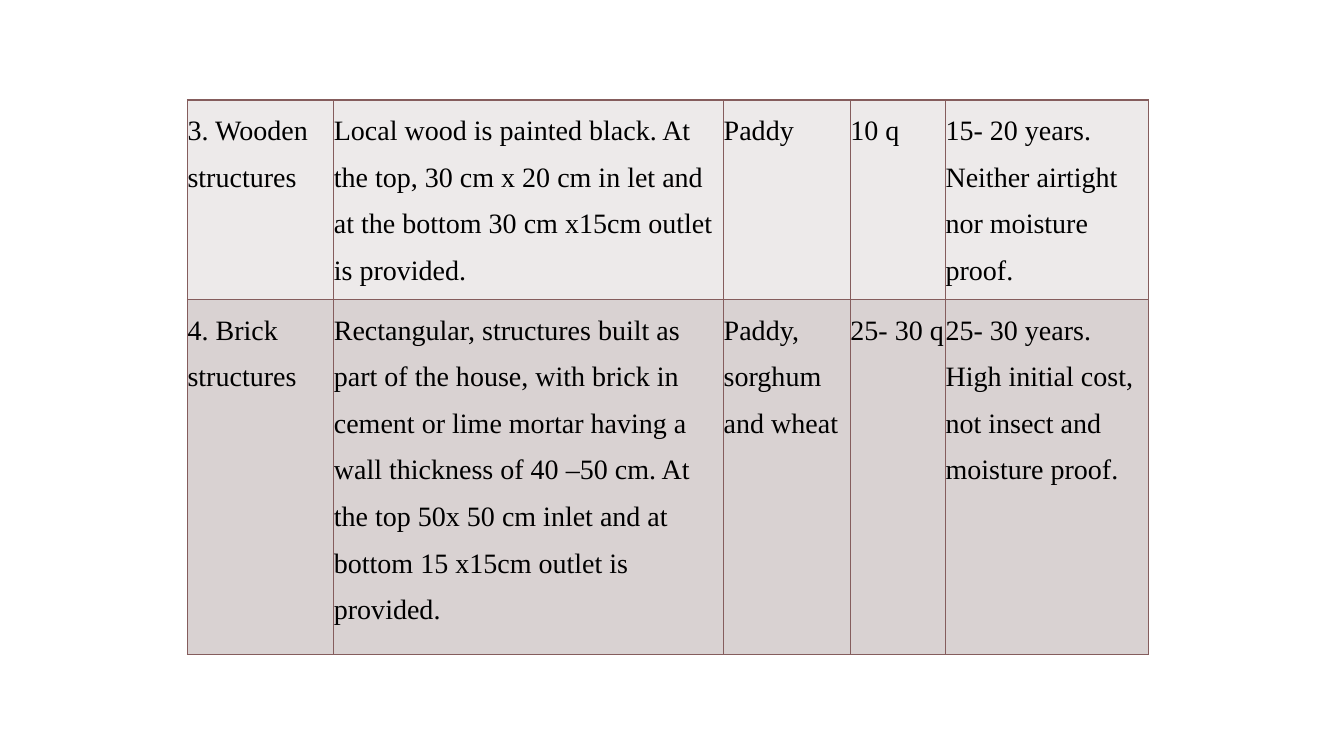
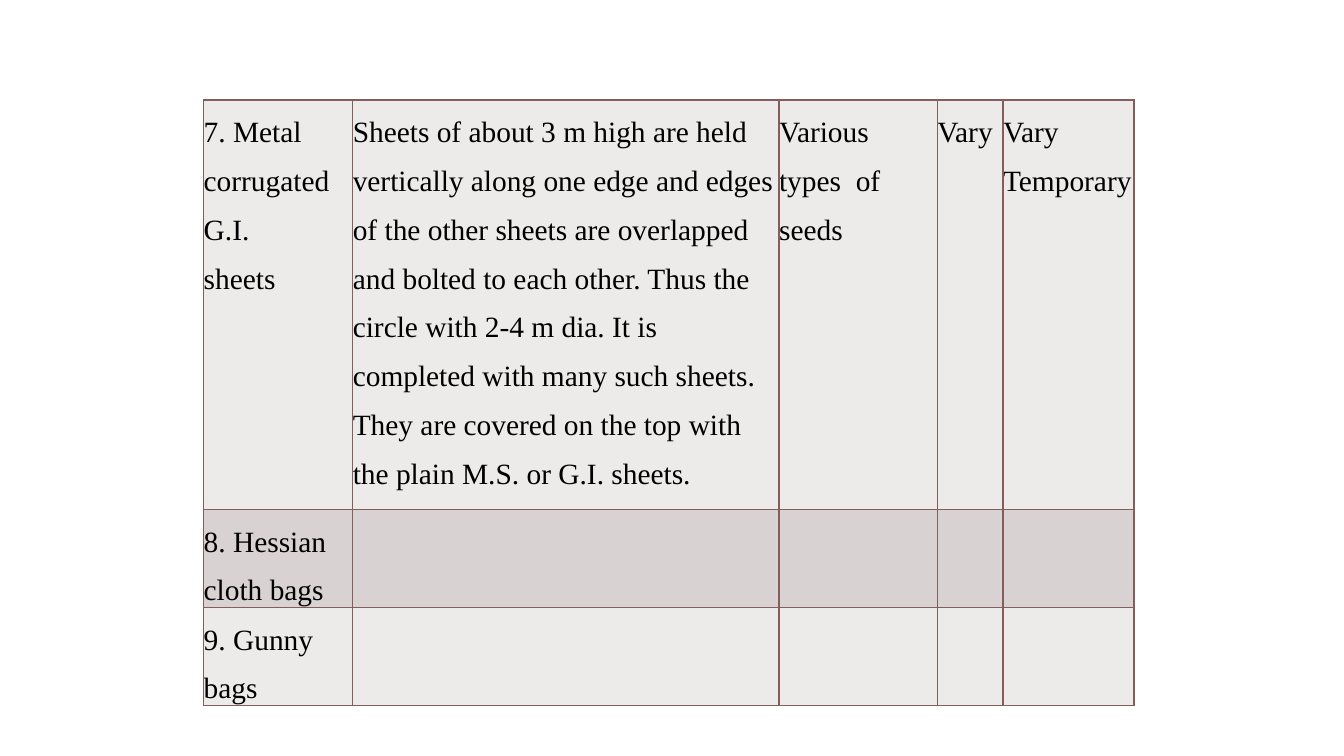
from dataclasses import dataclass

from lxml import etree
from pptx import Presentation
from pptx.dml.color import RGBColor
from pptx.oxml import ns
from pptx.util import Pt

# Content: one table per slide, lengths in points
TABLES = [
    {
        "left": 134,
        "size": 20,
        "cols": [104.5, 278.5, 90.5, 68, 145],
        "heights": [142.5, 253.5],
        "rows": [
            ["3. Wooden\nstructures",
             "Local wood is painted black. At the top, 30 cm x 20 cm in let and "
             "at the bottom 30 cm x15cm outlet is provided.",
             "Paddy",
             "10 q",
             "15- 20 years. Neither airtight nor moisture\nproof."],
            ["4. Brick\nstructures",
             "Rectangular, structures built as part of the house, with brick in "
             "cement or lime mortar having a\nwall thickness of 40 –50 cm. At "
             "the top 50x 50 cm inlet and at bottom 15 x15cm outlet is provided.",
             "Paddy,\nsorghum\nand wheat",
             "25- 30 q",
             "25- 30 years. High initial cost, not insect and moisture proof."],
        ],
    },
    {
        "left": 145.5,
        "size": 21,
        "cols": [106.5, 304.5, 113, 47, 93.5],
        "heights": [292.5, 70, 70],
        "rows": [
            ["7. Metal\ncorrugated G.I.\nsheets",
             "Sheets of about 3 m high are held vertically along one edge and "
             "edges of the other sheets are overlapped and bolted to each other. "
             "Thus the circle with 2-4 m dia. It is completed with many such "
             "sheets. They are covered on the top with the plain M.S. or G.I. "
             "sheets.",
             "Various types  of seeds",
             "Vary",
             "Vary Temporary"],
            ["8. Hessian cloth bags", "", "", "", ""],
            ["9. Gunny bags", "", "", "", ""],
        ],
    },
]


@dataclass(frozen=True)
class Theme:
    font: str = "Times New Roman"
    ink: str = "000000"
    border: str = "855D5D"
    bands: tuple = ("EDEAEA", "D9D2D2")
    border_width: float = 1
    line_spacing: float = 1.5
    table_top: float = 71.5


THEME = Theme()


def set_borders(cell):
    tc_pr = cell._tc.get_or_add_tcPr()
    for side in ("lnL", "lnR", "lnT", "lnB"):
        ln = etree.SubElement(tc_pr, ns.qn(f"a:{side}"), w=str(Pt(THEME.border_width)))
        fill = etree.SubElement(ln, ns.qn("a:solidFill"))
        etree.SubElement(fill, ns.qn("a:srgbClr"), val=THEME.border)


def write_cell(cell, content, size, band):
    cell.margin_left = cell.margin_right = cell.margin_top = cell.margin_bottom = 0
    set_borders(cell)
    cell.fill.solid()
    cell.fill.fore_color.rgb = RGBColor.from_string(band)
    if not content:
        return
    p = cell.text_frame.paragraphs[0]
    p.line_spacing = THEME.line_spacing
    for i, line in enumerate(content.split("\n")):
        if i:
            p.add_line_break()
        r = p.add_run()
        r.text = line
        r.font.name = THEME.font
        r.font.size = Pt(size)
        r.font.color.rgb = RGBColor.from_string(THEME.ink)


def add_storage_table(s, data):
    cols, heights = data["cols"], data["heights"]
    table = s.shapes.add_table(
        len(heights), len(cols), Pt(data["left"]), Pt(THEME.table_top),
        Pt(sum(cols)), Pt(sum(heights))).table
    table.first_row = table.horz_banding = False
    for column, width in zip(table.columns, cols):
        column.width = Pt(width)
    for i, (row, height) in enumerate(zip(table.rows, heights)):
        row.height = Pt(height)
        band = THEME.bands[i % len(THEME.bands)]
        for cell, content in zip(row.cells, data["rows"][i]):
            write_cell(cell, content, data["size"], band)


def main():
    prs = Presentation()
    prs.slide_width, prs.slide_height = Pt(960), Pt(540)
    for data in TABLES:
        s = prs.slides.add_slide(prs.slide_layouts[6])
        add_storage_table(s, data)
    prs.save("out.pptx")


if __name__ == "__main__":
    main()
